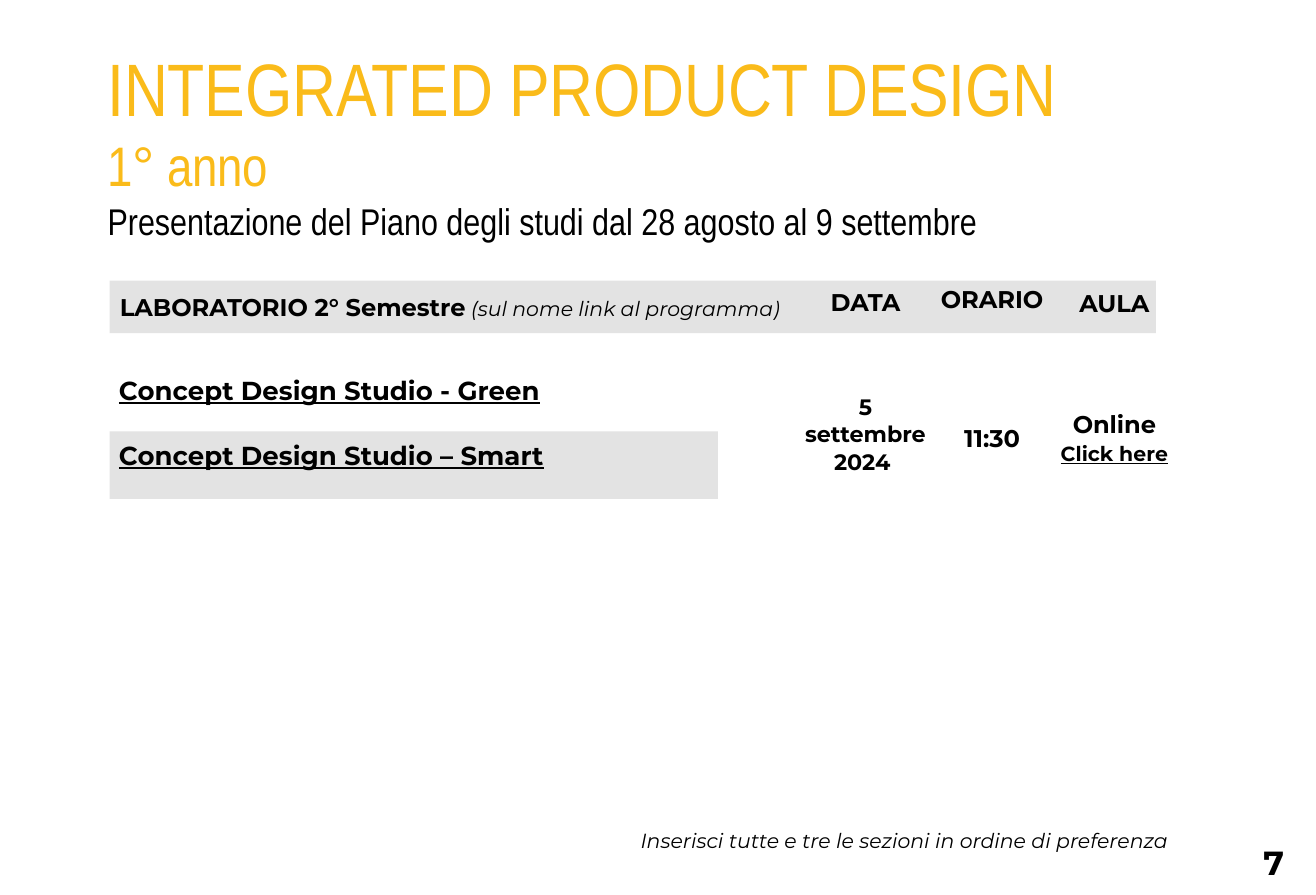
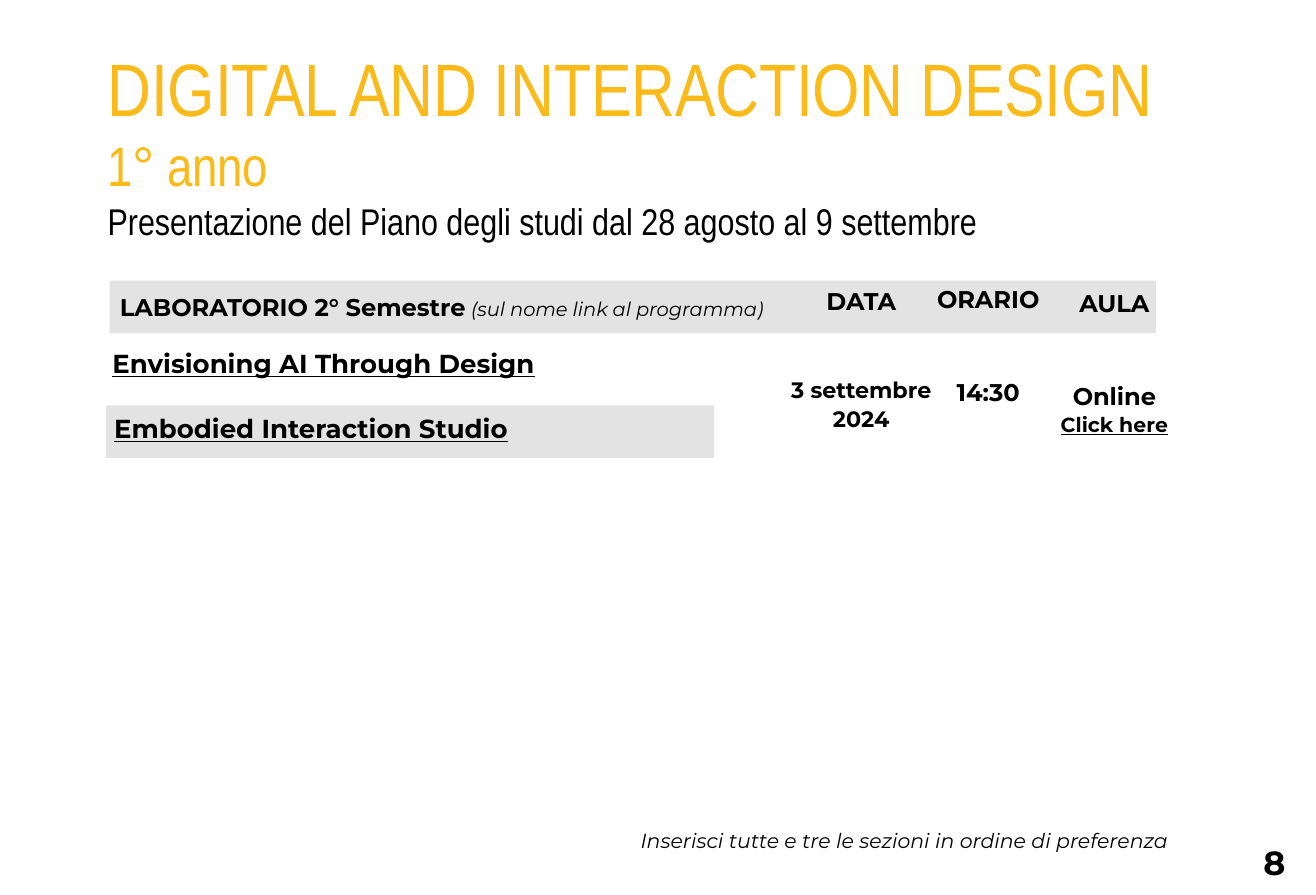
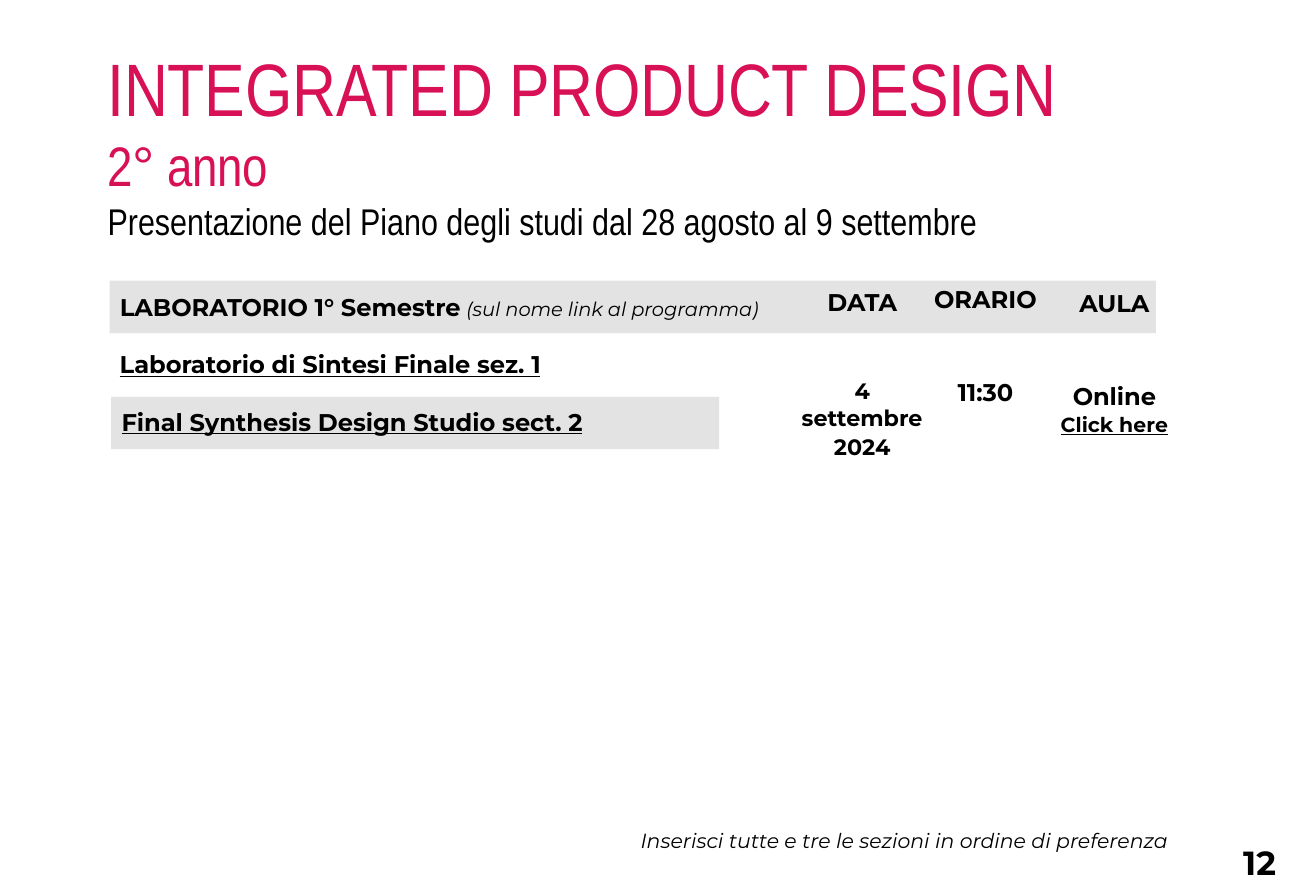
"""Build three study-plan slides with laboratory timetables."""
from pptx import Presentation
from pptx.dml.color import RGBColor
from pptx.enum.shapes import MSO_SHAPE
from pptx.enum.text import PP_ALIGN
from pptx.util import Pt

LEFT, CENTER, RIGHT = PP_ALIGN.LEFT, PP_ALIGN.CENTER, PP_ALIGN.RIGHT
RECTANGLE = MSO_SHAPE.RECTANGLE

COLORS = {"yellow": "FABB1A", "magenta": "D81056", "black": "000000", "gray": "E3E3E3"}
STYLES = {
    "title": {"name": "Arial Narrow", "size": 40},
    "year": {"name": "Arial Narrow", "size": 30},
    "period": {"name": "Arial Narrow", "size": 20},
    "heading": {"name": "Montserrat", "size": 13, "bold": True},
    "date": {"name": "Montserrat", "size": 12, "bold": True},
    "space": {"name": "Montserrat", "size": 12, "italic": True},
    "hint": {"name": "Montserrat", "size": 11, "italic": True},
    "small hint": {"name": "Montserrat", "size": 10.5, "italic": True},
    "link": {"name": "Montserrat", "size": 11, "bold": True, "underline": True},
    "course": {"name": "Montserrat", "size": 14, "bold": True, "underline": True},
    "small course": {"name": "Montserrat", "size": 13, "bold": True, "underline": True},
    "number": {"name": "Montserrat", "size": 18, "bold": True},
}
TRACKING = {"title": "-10", "year": "-10"}

PERIOD = "Presentazione del Piano degli studi dal 28 agosto al 9 settembre"
HINT = "(sul nome link al programma)"
NOTE = "Inserisci tutte e tre le sezioni in ordine di preferenza"
BREAK = "\n"

PAGE_WIDTH, PAGE_HEIGHT = 709, 482
TITLE_AREA = (58, 22.7, 584, 110)
HEADER_BAND = (59.1, 151.2, 563.6, 28.3)
HEADER_AREA = (64.6, 157.3, 362, 17)
NOTE_AREA = (239.4, 446.1, 390.2, 15)
BAND_WIDTH = 327.7
COURSE_SIZE = (315, 17)
TIME_LEFT, TIME_TOP = 503.2, 153
ROOM_LEFT, ROOM_TOP, ROOM_WIDTH = 566.9, 155.2, 67
NUMBER_TOP, NUMBER_SIZE = 453.3, (27, 24)

SLIDES = [
    {
        "title": "INTEGRATED PRODUCT DESIGN", "year": "1° anno", "accent": "yellow",
        "header": "LABORATORIO 2° Semestre", "hint style": "hint",
        "band": (59.1, 232.3, 36.4), "course style": "course",
        "courses": [("Concept Design Studio - Green", 64.1, 201.6),
                    ("Concept Design Studio – Smart", 64.1, 236.6)],
        "date": ["5 settembre", "2024 "], "date area": (430.3, 154.8, 72),
        "time": "11:30", "time width": 62.6,
        "gaps": (41.3, 59.5, 49.9), "column height": 110,
        "number": "7", "number left": 680.6,
    },
    {
        "title": "DIGITAL AND INTERACTION DESIGN", "year": "1° anno", "accent": "yellow",
        "header": "LABORATORIO 2° Semestre", "hint style": "small hint",
        "band": (57.1, 218.3, 28.3), "course style": "course",
        "courses": [("Envisioning AI Through Design", 60.6, 187.2),
                    ("Embodied Interaction Studio", 61.5, 222.2)],
        "date": ["3 settembre", "2024"], "date area": (423.7, 154.1, 80.6),
        "time": "14:30", "time width": 58.3,
        "gaps": (33, 34.7, 34.3), "column height": 95,
        "number": "8", "number left": 680.6,
    },
    {
        "title": "INTEGRATED PRODUCT DESIGN", "year": "2° anno", "accent": "magenta",
        "header": "LABORATORIO 1° Semestre", "hint style": "small hint",
        "band": (59.8, 213.7, 28.3), "course style": "small course",
        "courses": [("Laboratorio di Sintesi Finale sez. 1", 64.5, 188.3),
                    ("Final Synthesis Design Studio sect. 2", 65.5, 219.3)],
        "date": ["4 settembre ", "2024"], "date area": (430.3, 154.8, 68.4),
        "time": "11:30", "time width": 55.4,
        "gaps": (33, 34.7, 34.3), "column height": 95,
        "number": "12", "number left": 669.8,
    },
]


def add_band(page, area):
    band = page.shapes.add_shape(RECTANGLE, *map(Pt, area))
    band.shadow.inherit = False
    band.fill.solid()
    band.fill.fore_color.rgb = RGBColor.from_string(COLORS["gray"])
    band.line.fill.background()


def add_span(para, text, style, color):
    span = para.add_run()
    span.text = text
    for name, value in STYLES[style].items():
        setattr(span.font, name, Pt(value) if name == "size" else value)
    span.font.color.rgb = RGBColor.from_string(COLORS[color])
    if style in TRACKING:
        span._r.get_or_add_rPr().set("spc", TRACKING[style])


def add_text(page, area, paragraphs, align=LEFT):
    frame = page.shapes.add_textbox(*map(Pt, area)).text_frame
    frame.word_wrap = True
    for side in ("left", "top", "right", "bottom"):
        setattr(frame, f"margin_{side}", 0)
    for index, (gap, spans) in enumerate(paragraphs):
        para = frame.add_paragraph() if index else frame.paragraphs[0]
        para.alignment = align
        para.space_before = Pt(gap)
        for text, style, color in spans:
            add_span(para, text.rstrip(BREAK), style, color)
            if text.endswith(BREAK):
                para.add_line_break()


def line(text, style, gap=1):
    return gap, [(text, style, "black")]


def add_columns(page, content):
    date_gap, time_gap, room_gap = content["gaps"]
    day, calendar_year = content["date"]
    columns = [
        (content["date area"],
         [line("DATA", "heading"), line(day, "date", date_gap), line(calendar_year, "date")]),
        ((TIME_LEFT, TIME_TOP, content["time width"]),
         [line("ORARIO", "heading"), line(content["time"], "heading", time_gap)]),
        ((ROOM_LEFT, ROOM_TOP, ROOM_WIDTH),
         [line("AULA", "heading"), line("Online", "heading", room_gap),
          line("Click here", "link")]),
    ]
    for area, paragraphs in columns:
        add_text(page, (*area, content["column height"]), paragraphs, CENTER)


def add_page(deck, content):
    page = deck.slides.add_slide(deck.slide_layouts[6])
    accent = content["accent"]
    add_text(page, TITLE_AREA, [(1, [(content["title"] + BREAK, "title", accent),
                                     (content["year"] + BREAK, "year", accent),
                                     (PERIOD, "period", "black")])])
    band_left, band_top, band_height = content["band"]
    add_band(page, HEADER_BAND)
    add_band(page, (band_left, band_top, BAND_WIDTH, band_height))
    add_text(page, HEADER_AREA, [(1, [(content["header"], "heading", "black"),
                                      (" ", "space", "black"),
                                      (HINT, content["hint style"], "black")])])
    for course, left, top in content["courses"]:
        add_text(page, (left, top, *COURSE_SIZE), [line(course, content["course style"])])
    add_columns(page, content)
    add_text(page, NOTE_AREA, [line(NOTE, "hint")], RIGHT)
    add_text(page, (content["number left"], NUMBER_TOP, *NUMBER_SIZE),
             [line(content["number"], "number", 2.4)])


def main():
    deck = Presentation()
    deck.slide_width = Pt(PAGE_WIDTH)
    deck.slide_height = Pt(PAGE_HEIGHT)
    for content in SLIDES:
        add_page(deck, content)
    deck.save("out.pptx")


if __name__ == "__main__":
    main()
